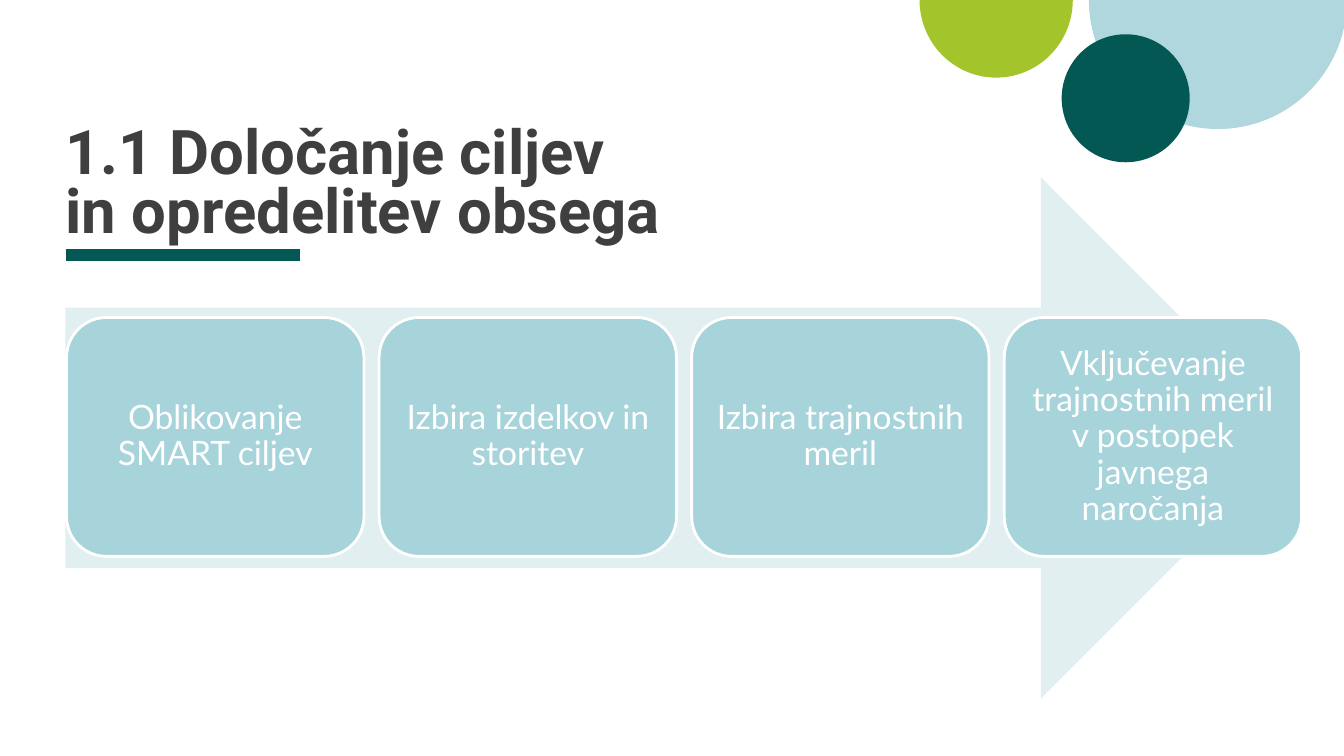
from pptx import Presentation
from pptx import util as u
from pptx.dml.color import RGBColor
from pptx.enum import shapes, text
from lxml import etree

TITLE = "1.1 Določanje ciljev\vin opredelitev obsega"
STEPS = [
    "Oblikovanje SMART ciljev",
    "Izbira izdelkov in storitev",
    "Izbira trajnostnih meril",
    "Vključevanje trajnostnih meril v postopek javnega naročanja",
]
COLORS = {
    "sky": "AFD7DD",
    "lime": "A3C42A",
    "pine": "035854",
    "arrow": "E1EFF1",
    "step": "A7D3DA",
    "white": "FFFFFF",
    "title": "3F3F3F",
}
SHAPE = shapes.MSO_SHAPE
HALF_DISC = [0, 108]
DECOR = [
    (SHAPE.PIE, (10.8, -1.28, 2.56, 2.56), HALF_DISC, "sky"),
    (SHAPE.PIE, (9.12, -0.77, 1.52, 1.54), HALF_DISC, "lime"),
    (SHAPE.OVAL, (10.53, 0.34, 1.27, 1.27), [], "pine"),
    (SHAPE.RIGHT_ARROW, (0.65, 1.76, 12.26, 5.17), [0.5, 0.5], "arrow"),
]
LEFT = 0.65
STEP_LEFT, STEP_TOP, STEP_WIDTH, STEP_HEIGHT = 0.66, 3.15, 2.95, 2.37
STEP_PITCH = 3.1
STEP_INSET = 0.12


def color(name):
    return RGBColor.from_string(COLORS[name])


def add_shape(page, kind, place, adjustments, fill):
    shape = page.shapes.add_shape(kind, *map(u.Inches, place))
    shape.shadow.inherit = False
    for index, value in enumerate(adjustments):
        shape.adjustments[index] = value
    shape.fill.solid()
    shape.fill.fore_color.rgb = color(fill)
    shape.line.fill.background()
    return shape


def set_text(shape, words, inset, anchor, align, spacing, face, size, ink, bold=False):
    frame = shape.text_frame
    frame.word_wrap = True
    frame.vertical_anchor = anchor
    frame.margin_left = frame.margin_right = u.Inches(inset)
    frame.margin_top = frame.margin_bottom = u.Inches(inset)
    para = frame.paragraphs[0]
    para.text = words
    para.alignment = align
    para.line_spacing = spacing
    para.font.name = face
    para.font.size = u.Pt(size)
    para.font.bold = bold
    para.font.color.rgb = color(ink)


def add_rule(page):
    left, right, height = map(u.Inches, (LEFT, 2.98, 2.53))
    rule = page.shapes.add_connector(
        shapes.MSO_CONNECTOR.STRAIGHT, left, height, right, height)
    rule.line.color.rgb = color("pine")
    rule.line.width = u.Pt(8)
    properties = rule.line._get_or_add_ln().getparent()
    etree.SubElement(
        properties, "{http://schemas.openxmlformats.org/drawingml/2006/main}effectLst")


def main():
    deck = Presentation()
    deck.slide_width, deck.slide_height = u.Inches(13.33), u.Inches(7.5)
    page = deck.slides.add_slide(deck.slide_layouts[6])

    for kind, place, adjustments, fill in DECOR:
        add_shape(page, kind, place, adjustments, fill)
    add_rule(page)

    title = page.shapes.add_textbox(*map(u.Inches, (LEFT, 1.84, 12.09, 0.59)))
    set_text(title, TITLE, 0, text.MSO_ANCHOR.BOTTOM, text.PP_ALIGN.LEFT,
             0.8, "Roboto", 44, "title", bold=True)

    for index, words in enumerate(STEPS):
        place = (STEP_LEFT + index * STEP_PITCH, STEP_TOP, STEP_WIDTH, STEP_HEIGHT)
        step = add_shape(page, SHAPE.ROUNDED_RECTANGLE, place, [0.167], "step")
        step.line.color.rgb = color("white")
        step.line.width = u.Pt(2)
        set_text(step, words, STEP_INSET, text.MSO_ANCHOR.MIDDLE,
                 text.PP_ALIGN.CENTER, 0.9, "Lato", 24, "white")

    deck.save("out.pptx")


if __name__ == "__main__":
    main()
